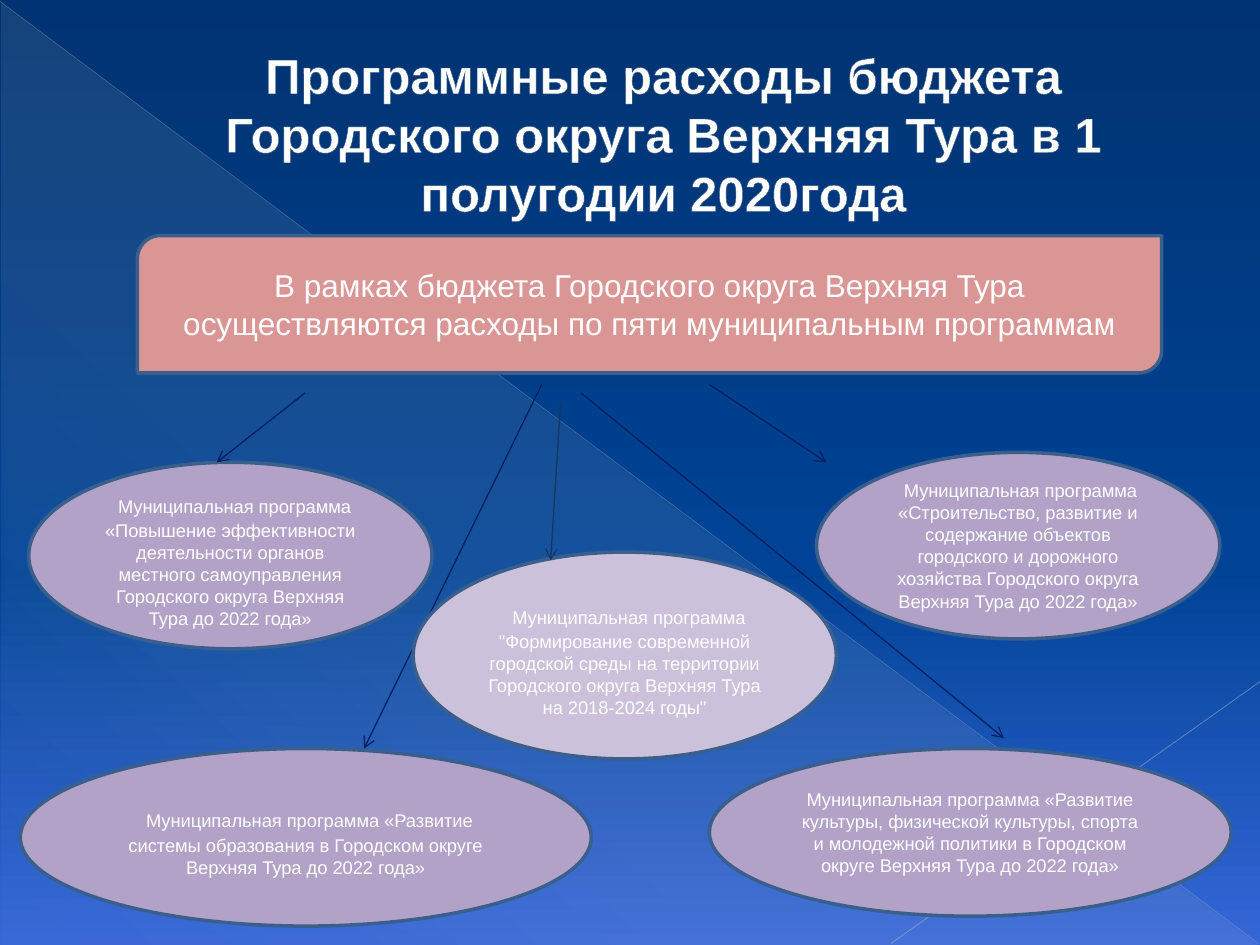
import pptx
import pptx.util
import pptx.dml.color
import pptx.enum.shapes
import pptx.enum.text
import pptx.oxml
import pptx.oxml.ns

Cm, Pt = pptx.util.Cm, pptx.util.Pt
RGB = pptx.dml.color.RGBColor
SHAPE = pptx.enum.shapes.MSO_SHAPE
qn = pptx.oxml.ns.qn

WHITE = RGB(0xFF, 0xFF, 0xFF)
NIGHT = RGB(0x00, 0x33, 0x71)
DEEP = RGB(0x00, 0x43, 0x96)
AZURE = RGB(0x35, 0x66, 0xD7)
CREAM = RGB(0xEE, 0xEC, 0xE1)
MIST = RGB(0xAD, 0xB6, 0xCE)
HAZE = RGB(0xB6, 0xBE, 0xD3)
EDGE = RGB(0x3A, 0x5F, 0x8C)
GLOW = RGB(0x37, 0x59, 0x83)
ROSE = RGB(0xD9, 0x96, 0x94)
LILAC = RGB(0xB3, 0xA2, 0xC7)
PALE = RGB(0xCC, 0xC1, 0xDA)
NAVY = RGB(0x00, 0x20, 0x60)
STEEL = RGB(0x17, 0x37, 0x5E)


def node(tag, **attrs):
    item = pptx.oxml.parse_xml(f"<{tag} {pptx.oxml.ns.nsdecls('a')}/>")
    for key, value in attrs.items():
        item.set(key, str(value))
    return item


def tint(color, alpha=100):
    item = node("a:srgbClr", val=color)
    if alpha < 100:
        item.append(node("a:alpha", val=alpha * 1000))
    return item


class Deck:
    font = "Arial"
    small = 10.5

    def __init__(self):
        self.prs = pptx.Presentation()
        self.prs.slide_width, self.prs.slide_height = Cm(25.4), Cm(19.05)
        self.slide = self.prs.slides.add_slide(self.prs.slide_layouts[6])
        self.shapes = self.slide.shapes

    def blend(self, fill, owner, angle, stops):
        """Gradient from (position, colour, alpha) stops."""
        fill.gradient()
        grad = owner.find(".//" + qn("a:gradFill"))
        row = grad.find(qn("a:gsLst"))
        for old in list(row):
            row.remove(old)
        for pos, color, alpha in stops:
            stop = node("a:gs", pos=pos * 1000)
            stop.append(tint(color, alpha))
            row.append(stop)
        grad.find(qn("a:lin")).set("ang", str(angle * 60000))

    def style(self, run, size, font=None, bold=False):
        run.font.name = font or self.font
        run.font.size = Pt(size)
        run.font.bold = bold
        run.font.color.rgb = WHITE

    def frame(self, shape):
        frame = shape.text_frame
        frame.word_wrap = True
        frame.vertical_anchor = pptx.enum.text.MSO_ANCHOR.MIDDLE
        para = frame.paragraphs[0]
        para.alignment = pptx.enum.text.PP_ALIGN.CENTER
        return para

    def title(self, box, text):
        para = self.frame(self.shapes.add_textbox(*map(Cm, box)))
        para.text = text
        para._p.get_or_add_pPr().set("marL", str(Cm(1.35)))
        run = para.runs[0]
        self.style(run, 28, bold=True)
        line, solid = node("a:ln", w=Pt(0.5)), node("a:solidFill")
        solid.append(tint(GLOW))
        line.append(solid)
        run._r.get_or_add_rPr().insert(0, line)

    def shape(self, kind, box):
        shape = self.shapes.add_shape(kind, *map(Cm, box))
        shape.shadow.inherit = False
        return shape

    def wedge(self, box, angle, stops):
        shape = self.shape(SHAPE.RIGHT_TRIANGLE, box)
        self.blend(shape.fill, shape._element, angle, stops)
        shape.line.fill.background()

    def card(self, kind, box, color, text, size=small, lead=None):
        """Filled shape; lead is the (size, font) of an opening space."""
        shape = self.shape(kind, box)
        shape.fill.solid()
        shape.fill.fore_color.rgb = color
        shape.line.color.rgb = EDGE
        shape.line.width = Pt(2)
        para = self.frame(shape)
        if lead:
            para.text = " "
            self.style(para.runs[0], *lead)
            run = para.add_run()
            run.text = text
        else:
            para.text = text
        self.style(para.runs[-1], size)

    def line(self, ends, color, width=0.75, alpha=100, arrow=False):
        kind = pptx.enum.shapes.MSO_CONNECTOR.STRAIGHT
        link = self.shapes.add_connector(kind, *map(Cm, ends))
        link.line.color.rgb = color
        link.line.width = Pt(width)
        props = link._element.spPr
        if alpha < 100:
            props.find(".//" + qn("a:srgbClr")).append(
                node("a:alpha", val=alpha * 1000))
        if arrow:
            props.find(qn("a:ln")).append(node("a:tailEnd", type="arrow"))
        props.append(node("a:effectLst"))


def main():
    deck = Deck()

    # Background
    deck.blend(deck.slide.background.fill, deck.slide._element, 90,
               [(0, NIGHT, 100), (60, DEEP, 100), (100, AZURE, 100)])
    deck.wedge((0.03, 0.05, 25.35, 19), 133,
               [(0, CREAM, 10), (70, CREAM, 8), (100, CREAM, 1)])
    deck.line((0, 0.03, 25.37, 19.02), MIST, 0.39, 35)
    deck.line((25.4, 13.74, 17.96, 19.02), HAZE, 0.47, 45)

    # Title and banner
    deck.title((1.27, 0.74, 22.86, 3.89),
               "Программные расходы бюджета Городского округа Верхняя Тура "
               "в 1 полугодии 2020года")
    deck.card(SHAPE.ROUND_2_DIAG_RECTANGLE, (2.77, 4.75, 20.65, 2.77), ROSE,
              "В рамках бюджета Городского округа Верхняя Тура "
              "осуществляются расходы по пяти муниципальным программам", 18)

    # Outer programmes
    outer = [
        ((0.58, 9.32, 8.13, 3.76), (18, "Arial"),
         "«Повышение эффективности деятельности органов местного "
         "самоуправления Городского округа Верхняя Тура до 2022 года»"),
        ((16.46, 9.12, 8.13, 3.76), (10.5, "TeX Gyre Adventor"),
         "«Строительство, развитие и содержание объектов городского и "
         "дорожного хозяйства Городского округа Верхняя Тура до 2022 года»"),
        ((14.3, 15.09, 10.52, 3.38), None,
         "«Развитие культуры, физической культуры, спорта и молодежной "
         "политики в Городском округе Верхняя Тура до 2022 года»"),
        ((0.41, 15.09, 11.51, 3.58), (18, "Times New Roman"),
         "«Развитие системы образования в Городском округе Верхняя Тура "
         "до 2022 года»"),
    ]
    head = "Муниципальная программа "
    for box, lead, name in outer:
        deck.card(SHAPE.OVAL, box, LILAC, head + name, lead=lead)

    # Arrows to the outer programmes
    for ends in [(6.15, 7.92, 4.37, 9.32), (10.92, 7.75, 7.34, 15.09),
                 (11.71, 7.92, 20.24, 14.88), (14.3, 7.75, 16.66, 9.32)]:
        deck.line(ends, NAVY, arrow=True)

    # Central programme and its arrow
    deck.card(SHAPE.OVAL, (8.33, 11.13, 8.53, 4.17), PALE,
              head + '"Формирование современной городской среды на территории '
              'Городского округа Верхняя Тура на 2018-2024 годы"',
              lead=(18, "Arial"))
    deck.line((11.3, 8.13, 11.1, 11.3), STEEL, arrow=True)

    deck.prs.save("out.pptx")


if __name__ == "__main__":
    main()
